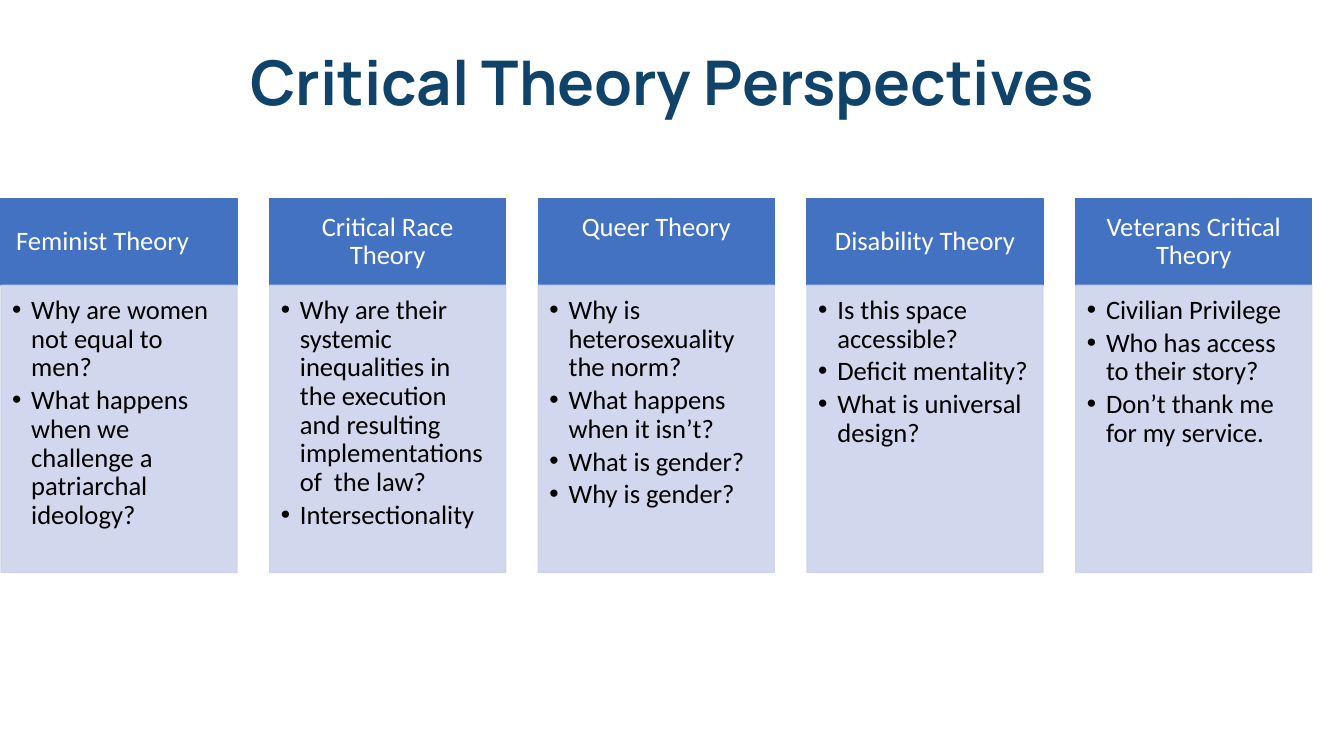
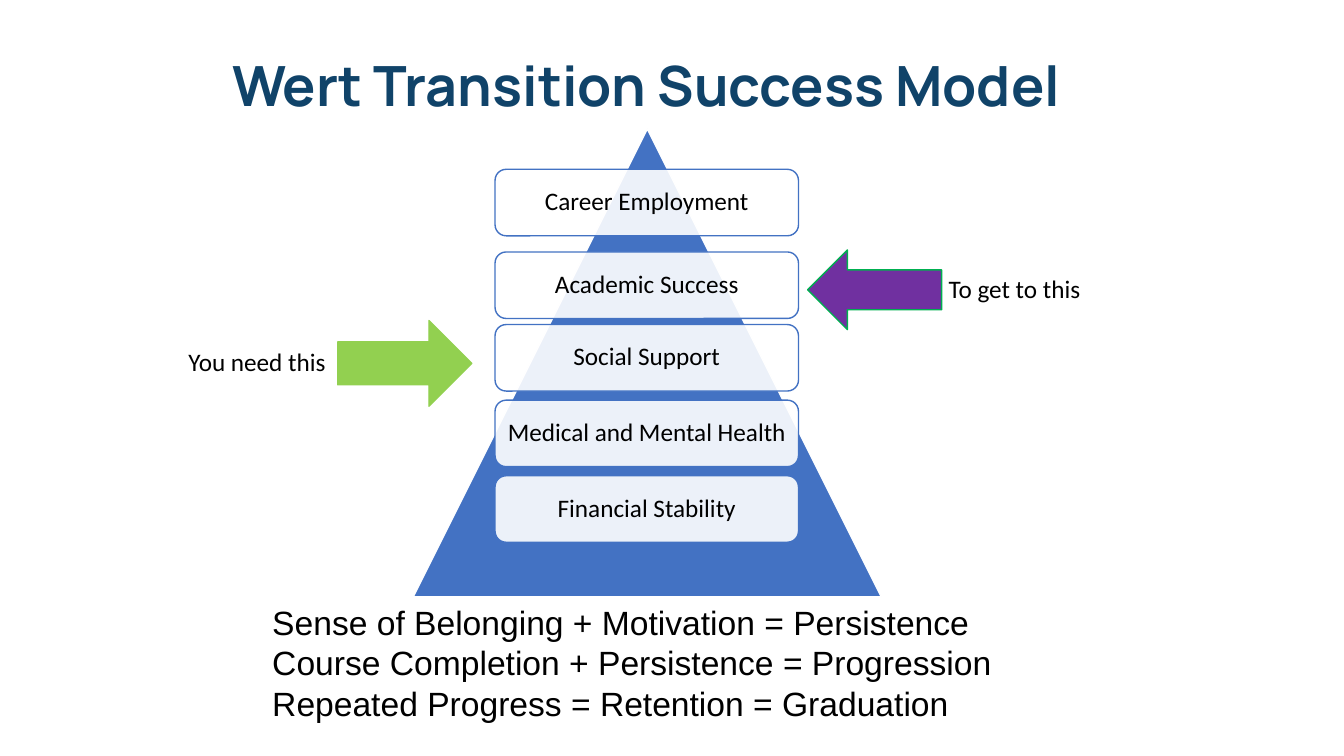
from lxml import etree
from pptx import Presentation
from pptx.dml.color import RGBColor
from pptx.enum.shapes import MSO_SHAPE as Preset
from pptx.enum.text import MSO_ANCHOR as Anchor, MSO_AUTO_SIZE as AutoSize, PP_ALIGN as Align
from pptx.oxml.ns import qn
from pptx.util import Inches, Pt

NAVY = RGBColor(0x10, 0x43, 0x69)
BLUE = RGBColor(0x43, 0x72, 0xC3)
LAVENDER = RGBColor(0xCC, 0xD3, 0xEA)
GREEN = RGBColor(0x92, 0xD0, 0x50)
EMERALD = RGBColor(0x00, 0xB0, 0x50)
PURPLE = RGBColor(0x70, 0x30, 0xA0)
BLACK = RGBColor(0, 0, 0)
WHITE = RGBColor(0xFF, 0xFF, 0xFF)

TITLE_FONT, LABEL_FONT, BODY_FONT = "Manrope", "Calibri", "Arial"
TITLE_ONLY, TITLE_AND_BODY = 5, 1
DEFAULT_INSETS = (0.1, 0.05, 0.1, 0.05)

# Column header, alignment, bottom inset, questions
THEORIES = [
    ("Feminist Theory", Align.LEFT, 0.08, [
        "Why are women not equal to men?",
        "What happens when we challenge a patriarchal ideology?"]),
    ("Critical Race Theory", Align.CENTER, 0.08, [
        "Why are their systemic inequalities in the execution and resulting "
        "implementations of  the law?",
        "Intersectionality"]),
    ("Queer Theory", Align.CENTER, 0.36, [
        "Why is heterosexuality the norm?",
        "What happens when it isn’t?",
        "What is gender?",
        "Why is gender?"]),
    ("Disability Theory", Align.CENTER, 0.08, [
        "Is this space accessible?",
        "Deficit mentality?",
        "What is universal design?"]),
    ("Veterans Critical Theory", Align.CENTER, 0.08, [
        "Civilian Privilege",
        "Who has access to their story?",
        "Don’t thank me for my service."]),
]

# Pyramid tier and its top edge
TIERS = [
    ("Career Employment", 1.68),
    ("Academic Success", 2.5),
    ("Social Support", 3.22),
    ("Medical and Mental Health", 3.97),
    ("Financial Stability", 4.72),
]

EQUATIONS = [
    "Sense of Belonging + Motivation = Persistence",
    "Course Completion + Persistence = Progression",
    "Repeated Progress = Retention = Graduation",
]


class Deck:
    """Holds the shared style and the slide being built."""

    def __init__(self):
        self.presentation = Presentation()
        self.presentation.slide_width = Inches(13.33)
        self.presentation.slide_height = Inches(7.5)
        self.slide = None

    def add_slide(self, layout, title, box, size):
        layouts = self.presentation.slide_layouts
        self.slide = self.presentation.slides.add_slide(layouts[layout])
        shape = self.slide.shapes.title
        self.place(shape, box)
        self.set_text(shape, [title], size, NAVY, TITLE_FONT, bold=True,
                      align=Align.CENTER, anchor=Anchor.MIDDLE, spacing=0.9)

    def place(self, shape, box):
        shape.left, shape.top, shape.width, shape.height = map(Inches, box)

    def set_text(self, shape, lines, size, color=BLACK, font=LABEL_FONT, bold=False,
                 align=Align.LEFT, anchor=Anchor.TOP, spacing=1.0, gap=0,
                 insets=DEFAULT_INSETS, margin=0, hanging=0, bullet=None):
        frame = shape.text_frame
        frame.word_wrap = True
        frame.auto_size = AutoSize.NONE
        frame.vertical_anchor = anchor
        (frame.margin_left, frame.margin_top,
         frame.margin_right, frame.margin_bottom) = map(Inches, insets)
        for index, line in enumerate(lines):
            paragraph = frame.add_paragraph() if index else frame.paragraphs[0]
            paragraph.alignment = align
            paragraph.line_spacing = spacing
            paragraph.space_before = Pt(gap if index else 0)
            paragraph.space_after = Pt(0)
            self.set_bullet(paragraph, margin, hanging, bullet)
            run = paragraph.add_run()
            run.text = line
            run.font.name = font
            run.font.size = Pt(size)
            run.font.bold = bold
            run.font.color.rgb = color

    def set_bullet(self, paragraph, margin, hanging, bullet):
        properties = paragraph._p.get_or_add_pPr()
        properties.set("marL", str(Inches(margin)))
        properties.set("indent", str(-Inches(hanging)))
        if bullet:
            etree.SubElement(properties, qn("a:buFont"), typeface=BODY_FONT)
            etree.SubElement(properties, qn("a:buChar"), char=bullet)
        else:
            etree.SubElement(properties, qn("a:buNone"))

    def add_shape(self, preset, box, fill, line, opacity=100, line_opacity=100):
        shape = self.slide.shapes.add_shape(preset, *map(Inches, box))
        shape.shadow.inherit = False
        shape.fill.solid()
        shape.fill.fore_color.rgb = fill
        shape.line.color.rgb = line
        shape.line.width = Pt(1)
        properties = shape._element.spPr
        self.set_opacity(properties.find(qn("a:solidFill")), opacity)
        self.set_opacity(properties.find(qn("a:ln")), line_opacity)
        return shape

    def set_opacity(self, parent, percent):
        if percent < 100:
            color = next(parent.iter(qn("a:srgbClr")))
            etree.SubElement(color, qn("a:alpha"), val=str(percent * 1000))

    def add_label(self, text, box):
        label = self.slide.shapes.add_textbox(*map(Inches, box))
        self.set_text(label, [text], 18)

    def add_column(self, left, width, header, align, bottom_inset, questions):
        head = self.add_shape(Preset.RECTANGLE, (left, 1.97, width, 0.86), BLUE, BLUE)
        self.set_text(head, [header], 19, WHITE, align=align, anchor=Anchor.MIDDLE,
                      spacing=0.9, insets=(0.15, 0.08, 0.15, bottom_inset))
        body = self.add_shape(Preset.RECTANGLE, (left, 2.83, width, 2.85),
                              LAVENDER, LAVENDER, opacity=90, line_opacity=90)
        self.set_text(body, questions, 19, spacing=0.9, gap=2.9,
                      insets=(0.11, 0.11, 0.15, 0.17),
                      margin=0.19, hanging=0.19, bullet="•")

    def add_tier(self, text, top):
        tier = self.add_shape(Preset.ROUNDED_RECTANGLE, (4.91, top, 3.01, 0.66),
                              WHITE, BLUE, opacity=90)
        self.set_text(tier, [text], 18, align=Align.CENTER, anchor=Anchor.MIDDLE,
                      spacing=0.9, insets=(0.07,) * 4)

    def add_body(self, lines, box):
        body = self.slide.placeholders[1]
        self.place(body, box)
        self.set_text(body, lines, 24, font=BODY_FONT, margin=0.5)


def build_perspectives(deck):
    deck.add_slide(TITLE_ONLY, "Critical Theory Perspectives",
                   (0.92, 0.12, 11.5, 1.45), 44)
    # Five equal columns spread over 13 inches
    width = 2.34
    pitch = (13 - width) / (len(THEORIES) - 1)
    for index, theory in enumerate(THEORIES):
        deck.add_column(0.01 + index * pitch, width, *theory)


def build_model(deck):
    deck.add_slide(TITLE_AND_BODY, "Wert Transition Success Model",
                   (2.1, 0.33, 8.62, 1.09), 39.6)
    # Pyramid with its tiers
    deck.add_shape(Preset.ISOSCELES_TRIANGLE, (4.1, 1.28, 4.64, 4.64), BLUE, WHITE)
    for text, top in TIERS:
        deck.add_tier(text, top)
    # Arrows and their labels
    deck.add_shape(Preset.RIGHT_ARROW, (3.35, 3.18, 1.33, 0.85), GREEN, GREEN)
    deck.add_label("You need this", (1.77, 3.39, 1.58, 0.4))
    deck.add_shape(Preset.LEFT_ARROW, (8.01, 2.48, 1.33, 0.79), PURPLE, EMERALD)
    deck.add_label("To get to this", (9.31, 2.66, 1.74, 0.42))
    # Equations below the pyramid
    deck.add_body(EQUATIONS, (2.1, 5.92, 8.62, 1.31))


def main():
    deck = Deck()
    build_perspectives(deck)
    build_model(deck)
    deck.presentation.save("out.pptx")


if __name__ == "__main__":
    main()
